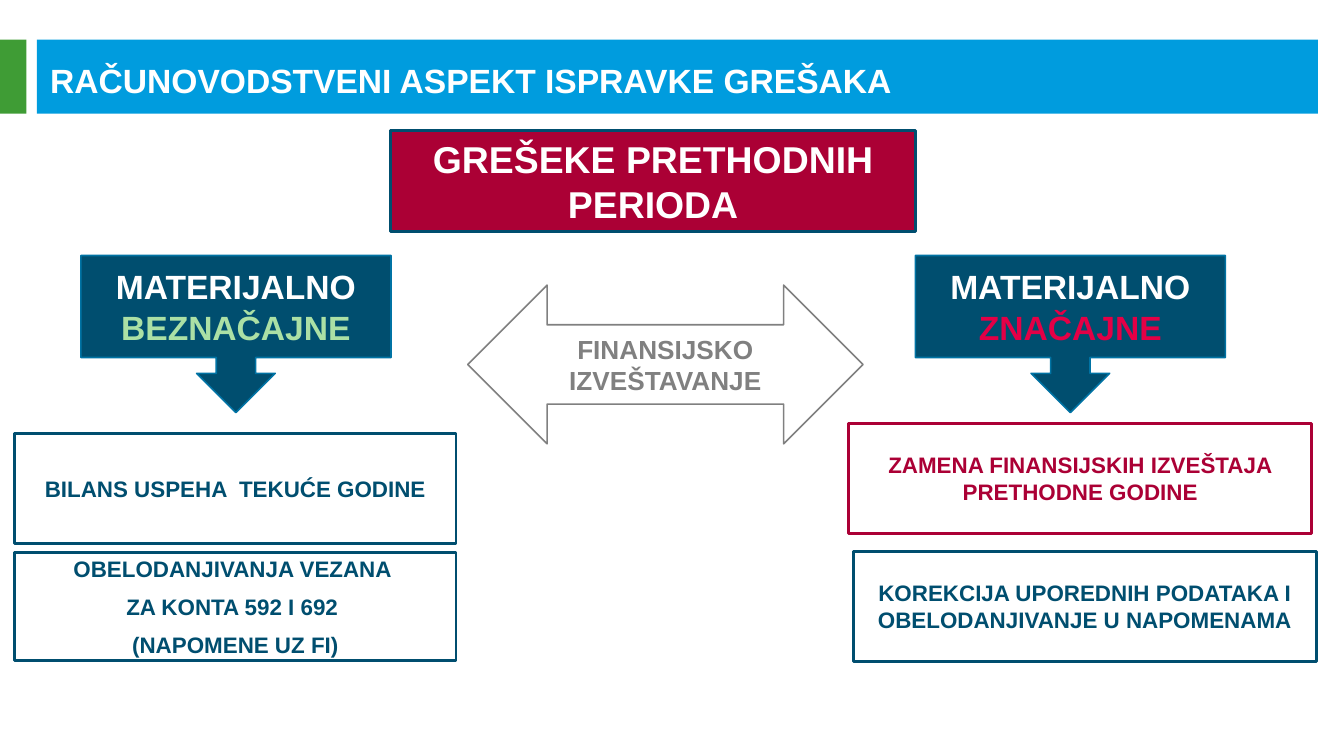
from pptx import Presentation
from pptx import util as u
from pptx.dml.color import RGBColor
from pptx.enum import shapes, text

COLORS = {
    "white": "FFFFFF", "sky": "009CDE", "green": "3F9C35", "crimson": "AB0035",
    "navy": "004E6F", "edge": "0073A4", "gray": "808080",
    "mint": "ABE0A5", "red": "E40046",
}
SHAPE = shapes.MSO_SHAPE


def rgb(name):
    return RGBColor.from_string(COLORS[name])


def write(frame, paragraphs, size, color, align=text.PP_ALIGN.CENTER, after=0):
    """Fill a frame; each paragraph is a string or a list of (text, color) runs."""
    frame.word_wrap = True
    frame.vertical_anchor = text.MSO_ANCHOR.MIDDLE
    for index, content in enumerate(paragraphs):
        paragraph = frame.paragraphs[0] if index == 0 else frame.add_paragraph()
        paragraph.alignment = align
        paragraph.space_after = u.Pt(after)
        runs = [(content, color)] if isinstance(content, str) else content
        for words, run_color in runs:
            run = paragraph.add_run()
            run.text = words
            run.font.name = "Arial"
            run.font.size = u.Pt(size)
            run.font.bold = True
            run.font.color.rgb = rgb(run_color)


class SlideBuilder:
    def __init__(self, slide):
        self.slide = slide

    def shape(self, kind, box, fill=None, line=None, width=1.5):
        shape = self.slide.shapes.add_shape(kind, *map(u.Cm, box))
        shape.shadow.inherit = False
        if fill:
            shape.fill.solid()
            shape.fill.fore_color.rgb = rgb(fill)
        else:
            shape.fill.background()
        if line:
            shape.line.color.rgb = rgb(line)
            shape.line.width = u.Pt(width)
        else:
            shape.line.fill.background()
        return shape

    def title(self, words, box):
        frame = self.slide.shapes.add_textbox(*map(u.Cm, box)).text_frame
        write(frame, [words], 18, "white", align=text.PP_ALIGN.LEFT)

    def heading(self, words, box):
        banner = self.shape(SHAPE.RECTANGLE, box, "crimson", "navy")
        write(banner.text_frame, [words], 20, "white", after=6)

    def double_arrow(self, words, box):
        arrow = self.shape(SHAPE.LEFT_RIGHT_ARROW, box, line="gray", width=0.85)
        write(arrow.text_frame, [words], 14, "gray")

    def category(self, kind, accent, left):
        callout = self.shape(SHAPE.DOWN_ARROW_CALLOUT, (left, 4.83, 5.86, 2.97),
                             "navy", "edge", 0.85)
        runs = [("MATERIJALNO ", "white"), (kind, accent)]
        write(callout.text_frame, [runs], 18, "white")

    def outcome(self, paragraphs, box, color="navy"):
        frame = self.shape(SHAPE.RECTANGLE, box, line=color).text_frame
        write(frame, paragraphs, 12, color, after=6)


def main():
    deck = Presentation()
    deck.slide_width, deck.slide_height = u.Cm(25.4), u.Cm(14.29)
    page = SlideBuilder(deck.slides.add_slide(deck.slide_layouts[6]))

    page.shape(SHAPE.RECTANGLE, (0.7, 0.75, 24.21, 1.4), "sky")
    page.shape(SHAPE.RECTANGLE, (0, 0.75, 0.5, 1.4), "green")
    page.title("RAČUNOVODSTVENI ASPEKT ISPRAVKE GREŠAKA", (0.7, 0.77, 24.5, 1.47))
    page.heading("GREŠEKE PRETHODNIH PERIODA", (7.38, 2.47, 9.93, 1.91))
    page.double_arrow("FINANSIJSKO IZVEŠTAVANJE", (8.84, 5.39, 7.47, 3))

    page.category("BEZNAČAJNE", "mint", 1.53)
    page.category("ZNAČAJNE", "red", 17.3)

    page.outcome(["BILANS USPEHA  TEKUĆE GODINE"], (0.28, 8.19, 8.34, 2.09))
    page.outcome(["ZAMENA FINANSIJSKIH IZVEŠTAJA PRETHODNE GODINE"],
                 (16.04, 8, 8.75, 2.09), "crimson")
    page.outcome(["KOREKCIJA UPOREDNIH PODATAKA I OBELODANJIVANJE U NAPOMENAMA"],
                 (16.13, 10.42, 8.75, 2.09))
    page.outcome(["OBELODANJIVANJA VEZANA ", "ZA KONTA 592 I 692 ", "(NAPOMENE UZ FI)"],
                 (0.28, 10.45, 8.34, 2.03))

    deck.save("out.pptx")


if __name__ == "__main__":
    main()
